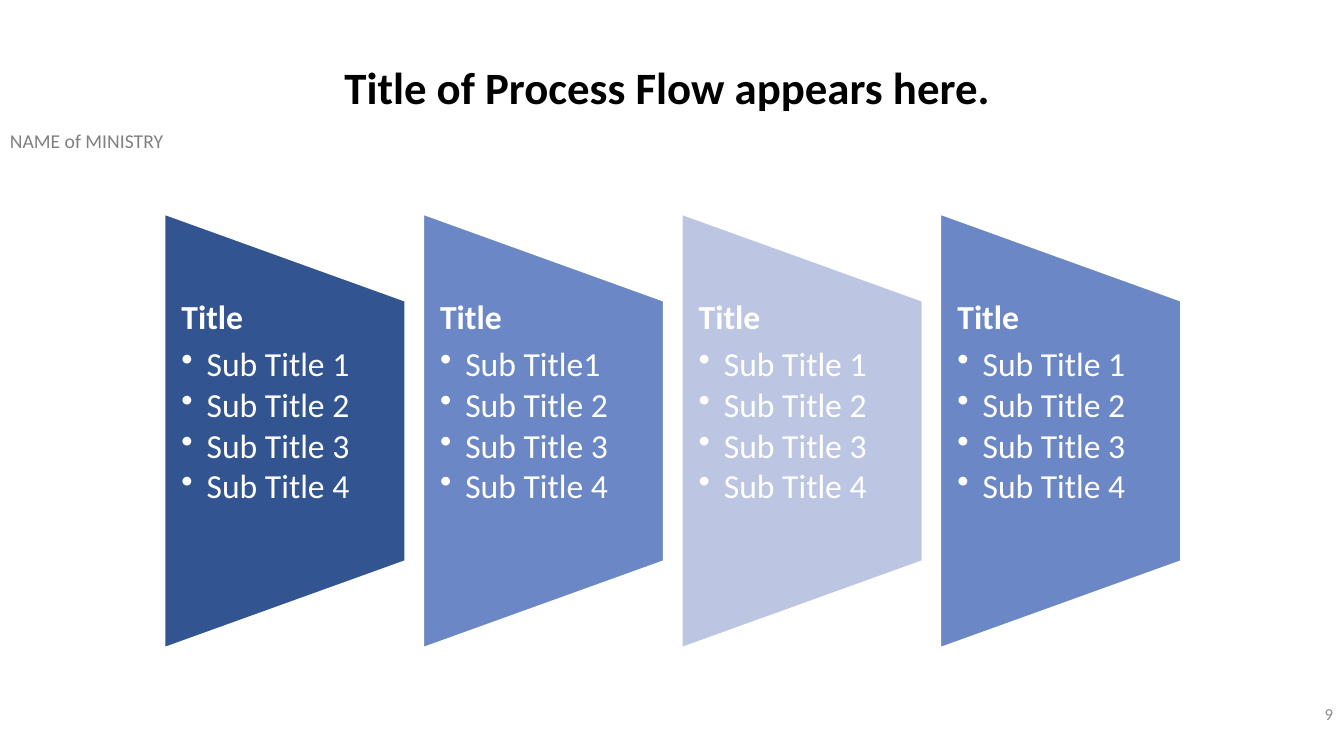
from dataclasses import dataclass

from lxml import etree
from pptx import Presentation
from pptx import util as u
from pptx.dml.color import RGBColor
from pptx.enum import shapes, text
from pptx.oxml.ns import qn

FONT = "Calibri"
WHITE = "FFFFFF"
STAGE_TOP, STAGE_WIDTH, STAGE_HEIGHT = 2.12, 2.39, 4.31
FIRST_LEFT, STAGE_PITCH = 1.63, 2.565
BODY_TOP, BODY_HEIGHT = 2.98, 2.59


@dataclass
class Caption:
    wording: str
    left: float
    top: float
    width: float
    height: float
    size: float
    color: str
    bold: bool = False
    align: text.PP_ALIGN = text.PP_ALIGN.LEFT
    anchor: text.MSO_ANCHOR = text.MSO_ANCHOR.TOP
    line_spacing: float = 1.0


@dataclass
class Stage:
    fill: str
    first_item: str = "Sub Title 1"


CAPTIONS = [
    Caption("NAME of MINISTRY", 0, 1.23, 2.9, 0.34, 14, "808080"),
    Caption("9", 10.32, 6.88, 3, 0.4, 12, "8C8C8C",
            align=text.PP_ALIGN.RIGHT, anchor=text.MSO_ANCHOR.MIDDLE),
    Caption("Title of Process Flow appears here.", 3.22, 0.6, 6.8, 1.07, 32, "000000",
            bold=True, align=text.PP_ALIGN.CENTER, line_spacing=0.9),
]
STAGES = [Stage("325491"), Stage("6C87C5", "Sub Title1"), Stage("BCC6E2"), Stage("6C87C5")]
LATER_ITEMS = [f"Sub Title {number}" for number in range(2, 5)]


def rgb(value: str) -> RGBColor:
    return RGBColor.from_string(value)


def apply_format(target, values: dict) -> None:
    for name, value in values.items():
        setattr(target, name, value)


def write(paragraph, wording: str, size: float, color: str, bold: bool, layout: dict) -> None:
    paragraph.text = wording
    apply_format(paragraph.font, {"name": FONT, "size": u.Pt(size), "bold": bold})
    paragraph.font.color.rgb = rgb(color)
    apply_format(paragraph, layout)


def add_bullet(paragraph) -> None:
    properties = paragraph._p.get_or_add_pPr()
    properties.set("marL", str(u.Inches(0.25)))
    properties.set("indent", str(u.Inches(-0.25)))
    etree.SubElement(properties, qn("a:buChar")).set("char", "•")


def add_caption(slide, caption: Caption) -> None:
    box = slide.shapes.add_textbox(u.Inches(caption.left), u.Inches(caption.top),
                                   u.Inches(caption.width), u.Inches(caption.height))
    apply_format(box.text_frame, {"word_wrap": True, "vertical_anchor": caption.anchor})
    write(box.text_frame.paragraphs[0], caption.wording, caption.size, caption.color,
          caption.bold, {"alignment": caption.align, "line_spacing": caption.line_spacing})


def add_stage(slide, stage: Stage, left: float) -> None:
    # Trapezoid: laid flat about the same centre, then turned on its side
    offset = (STAGE_HEIGHT - STAGE_WIDTH) / 2
    shape = slide.shapes.add_shape(
        shapes.MSO_SHAPE.FLOWCHART_MANUAL_OPERATION,
        u.Inches(left - offset), u.Inches(STAGE_TOP + offset),
        u.Inches(STAGE_HEIGHT), u.Inches(STAGE_WIDTH))
    shape.rotation = 270
    shape.shadow.inherit = False
    shape.fill.solid()
    shape.fill.fore_color.rgb = rgb(stage.fill)
    shape.line.color.rgb = rgb(WHITE)
    shape.line.width = u.Pt(1.5)

    # Heading and bulleted items
    box = slide.shapes.add_textbox(u.Inches(left), u.Inches(BODY_TOP),
                                   u.Inches(STAGE_WIDTH), u.Inches(BODY_HEIGHT))
    frame = box.text_frame
    apply_format(frame, {"word_wrap": True, "margin_left": u.Inches(0.17),
                         "margin_right": u.Inches(0.17), "margin_top": 0,
                         "margin_bottom": 0})
    write(frame.paragraphs[0], "Title", 24, WHITE, True,
          {"line_spacing": 0.9, "space_after": u.Pt(7.7)})
    for item in [stage.first_item, *LATER_ITEMS]:
        paragraph = frame.add_paragraph()
        add_bullet(paragraph)
        write(paragraph, item, 24, WHITE, False,
              {"level": 1, "line_spacing": 0.9, "space_after": u.Pt(3.2)})


def main() -> None:
    presentation = Presentation()
    presentation.slide_width = u.Inches(13.33)
    presentation.slide_height = u.Inches(7.5)
    slide = presentation.slides.add_slide(presentation.slide_layouts[6])

    # Process stages from left to right
    for index, stage in enumerate(STAGES):
        add_stage(slide, stage, FIRST_LEFT + index * STAGE_PITCH)

    # Title, ministry name and page number
    for caption in CAPTIONS:
        add_caption(slide, caption)

    presentation.save("out.pptx")


if __name__ == "__main__":
    main()
